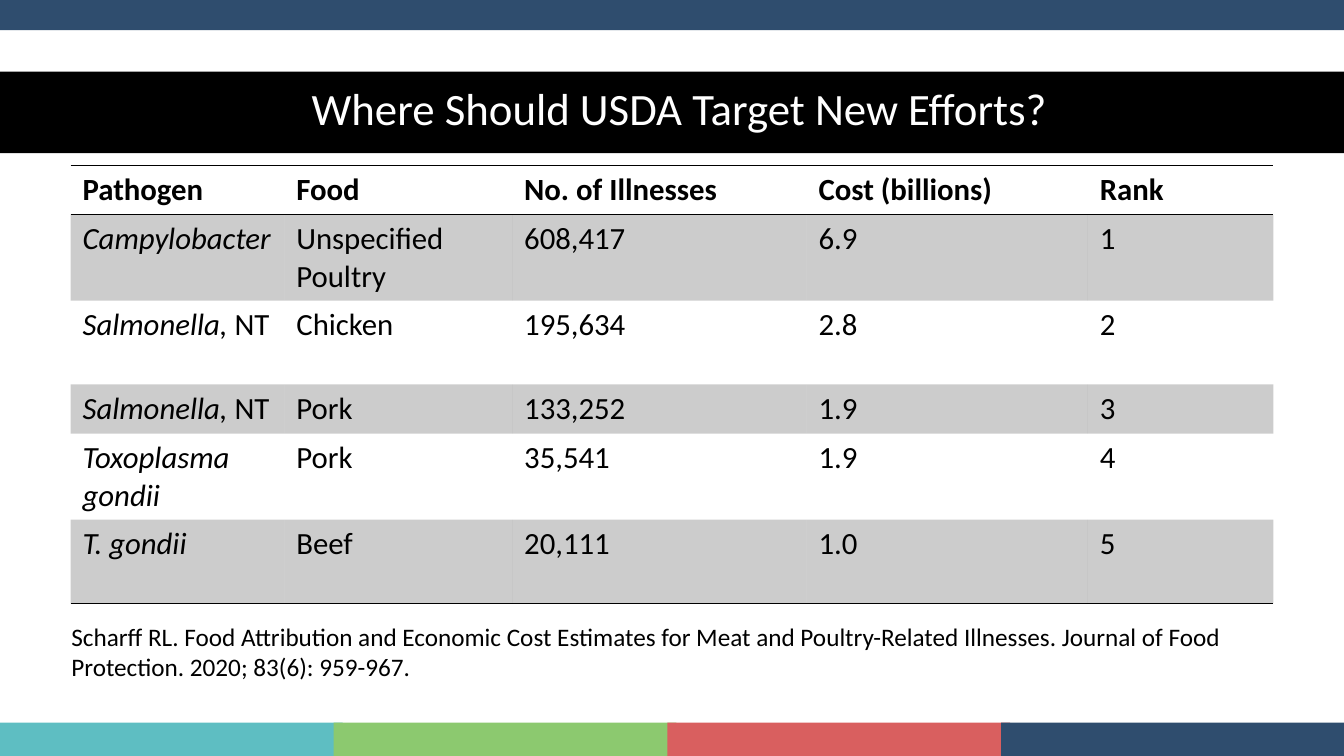
from lxml.etree import SubElement
from pptx import Presentation
from pptx.dml.color import RGBColor as RGB
from pptx.enum.shapes import MSO_SHAPE as SHAPE
from pptx.enum.text import MSO_ANCHOR as ANCHOR, PP_ALIGN as ALIGN
from pptx.oxml import parse_xml
from pptx.oxml.ns import nsdecls, qn
from pptx.util import Pt

PX = 9144  # 100 px to the inch
THEME = {
    "font": "Calibri", "title": 32, "table": 22, "source": 18,
    "black": "000000", "white": "FFFFFF", "navy": "2F4D6E",
    "footer": ["5EBEC2", "8CC96F", "D95F5F", "2F4D6E"],
    "band_alpha": 20000, "rule": 12700,
}
NO_STYLE = "{2D5ABB26-0587-4C30-8999-92F81FD0307C}"

prs = Presentation()
prs.slide_width, prs.slide_height = 1333 * PX, 750 * PX
s = prs.slides.add_slide(prs.slide_layouts[6])


def add_bar(x, y, w, h, color):
    sp = s.shapes.add_shape(SHAPE.RECTANGLE, x * PX, y * PX, w * PX, h * PX)
    sp.shadow.inherit = False
    sp.fill.solid()
    sp.fill.fore_color.rgb = RGB.from_string(color)
    sp.line.fill.background()


def add_run(p, text, size, color="black", **fmt):
    r = p.add_run()
    r.text = text
    r.font.color.rgb = RGB.from_string(THEME[color])
    fmt |= {"name": THEME["font"], "size": Pt(THEME[size])}
    for key, value in fmt.items():
        setattr(r.font, key, value)


# Title band
add_bar(0, 71, 1333, 81, THEME["black"])
tf = s.shapes.add_textbox(61 * PX, 70 * PX, 1226 * PX, 81 * PX).text_frame
tf.word_wrap = True
tf.vertical_anchor = ANCHOR.MIDDLE
p = tf.paragraphs[0]
p.alignment, p.line_spacing = ALIGN.CENTER, 0.9
add_run(p, "Where Should USDA Target New Efforts?", "title", "white")

# Pathogen table: the first column holds (italic part, upright part)
HEADERS = ["Pathogen", "Food", "No. of Illnesses", "Cost (billions)", "Rank"]
PATHOGENS = [
    (("Campylobacter", ""), "Unspecified Poultry", "608,417", "6.9", "1"),
    (("Salmonella, ", "NT"), "Chicken", "195,634", "2.8", "2"),
    (("Salmonella,", " NT"), "Pork", "133,252", "1.9", "3"),
    (("Toxoplasma gondii", ""), "Pork", "35,541", "1.9", "4"),
    (("T. gondii", ""), "Beef", "20,111", "1.0", "5"),
]
COL_WIDTHS = [212, 226, 292, 279, 184]
ROW_HEIGHTS = [49, 79, 83, 49, 83, 83]
MARGINS = {"margin_left": 12, "margin_right": 12, "margin_top": 6, "margin_bottom": 6}
RULES = {0: ["lnB", "lnT"], len(PATHOGENS): ["lnB"]}

tb = s.shapes.add_table(len(ROW_HEIGHTS), len(COL_WIDTHS), 70 * PX, 164 * PX,
                        sum(COL_WIDTHS) * PX, sum(ROW_HEIGHTS) * PX).table
tb.horz_banding = tb.first_row = False
tb._tbl.tblPr.find(qn("a:tableStyleId")).text = NO_STYLE
for col, width in zip(tb.columns, COL_WIDTHS):
    col.width = width * PX
for row, height in zip(tb.rows, ROW_HEIGHTS):
    row.height = height * PX

for i, values in enumerate([HEADERS] + PATHOGENS):
    for j, value in enumerate(values):
        cell = tb.cell(i, j)
        for key, margin in MARGINS.items():
            setattr(cell, key, margin * PX)
        p = cell.text_frame.paragraphs[0]
        if i and j == 0:
            for text, italic in zip(value, (True, False)):
                if text:
                    add_run(p, text, "table", italic=italic)
        else:
            add_run(p, value, "table", bold=i == 0)
        tcPr = cell._tc.get_or_add_tcPr()
        if i % 2:
            cell.fill.solid()
            cell.fill.fore_color.rgb = RGB.from_string(THEME["black"])
            color = tcPr.find(qn("a:solidFill"))[0]
            SubElement(color, qn("a:alpha"), val=str(THEME["band_alpha"]))
        else:
            cell.fill.background()
        for side in RULES.get(i, []):
            tcPr.insert(0, parse_xml(
                f'<a:{side} {nsdecls("a")} w="{THEME["rule"]}"><a:solidFill>'
                f'<a:srgbClr val="{THEME["black"]}"/></a:solidFill></a:{side}>'))

# Footer strips and top bar
for i, color in enumerate(THEME["footer"]):
    add_bar(331 * i, 717, 340, 33, color)
add_bar(0, 0, 1333, 30, THEME["navy"])

# Source line
tf = s.shapes.add_textbox(61 * PX, 611 * PX, 1202 * PX, 71 * PX).text_frame
tf.word_wrap = True
add_run(tf.paragraphs[0],
        "Scharff RL. Food Attribution and Economic Cost Estimates for Meat and "
        "Poultry-Related Illnesses. Journal of Food Protection. 2020; 83(6): 959-967.",
        "source")

prs.save("out.pptx")
